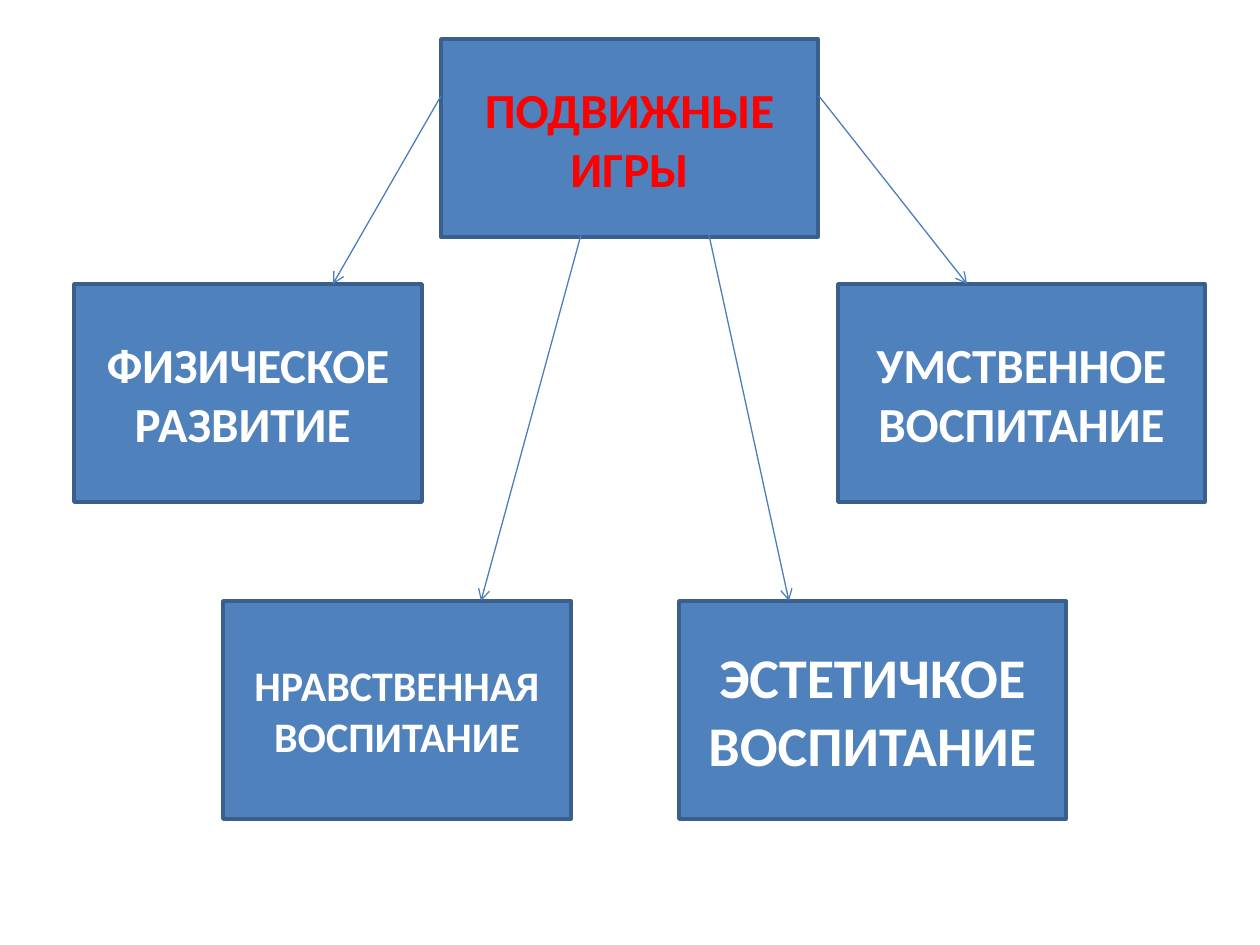
import pptx
import pptx.dml.color
import pptx.enum.shapes
import pptx.enum.text
import pptx.oxml.ns
import pptx.util
from lxml import etree

PX = 914400 // 126
SLIDE_SIZE = (1260, 945)
FILL, BORDER, ARROW = "4F81BD", "3A5F8C", "4B7EBC"
RED, WHITE = "FF0000", "FFFFFF"

# text, (left, top, width, height) in px, font size, text colour
BOXES = [
    ("ПОДВИЖНЫЕ ИГРЫ", (441, 39, 377, 198), 28, RED),
    ("ФИЗИЧЕСКОЕ РАЗВИТИЕ ", (74, 284, 348, 218), 28, WHITE),
    ("НРАВСТВЕННАЯ ВОСПИТАНИЕ", (223, 601, 348, 218), 24, WHITE),
    ("ЭСТЕТИЧКОЕ ВОСПИТАНИЕ", (679, 601, 387, 218), 32, WHITE),
    ("УМСТВЕННОЕ ВОСПИТАНИЕ", (838, 284, 367, 218), 28, WHITE),
]

# start x, start y, end x, end y in px
ARROWS = [
    (581, 235, 481, 601),
    (709, 235, 789, 601),
    (441, 96, 333, 284),
    (819, 96, 967, 284),
]


def emu(lengths):
    return [length * PX for length in lengths]


def color(value):
    return pptx.dml.color.RGBColor.from_string(value)


def style_line(line, value, width):
    line.color.rgb = color(value)
    line.width = pptx.util.Pt(width)


def add_box(slide, text, bounds, size, text_color):
    shape = slide.shapes.add_shape(
        pptx.enum.shapes.MSO_SHAPE.RECTANGLE, *emu(bounds))
    shape.shadow.inherit = False
    shape.fill.solid()
    shape.fill.fore_color.rgb = color(FILL)
    style_line(shape.line, BORDER, 2)
    frame = shape.text_frame
    frame.word_wrap = True
    frame.vertical_anchor = pptx.enum.text.MSO_ANCHOR.MIDDLE
    paragraph = frame.paragraphs[0]
    paragraph.alignment = pptx.enum.text.PP_ALIGN.CENTER
    run = paragraph.add_run()
    run.text = text
    run.font.name = "Calibri"
    run.font.size = pptx.util.Pt(size)
    run.font.bold = True
    run.font.color.rgb = color(text_color)


def add_arrow(slide, points):
    connector = slide.shapes.add_connector(
        pptx.enum.shapes.MSO_CONNECTOR.STRAIGHT, *emu(points))
    style_line(connector.line, ARROW, 0.75)
    properties = connector._element.spPr
    outline = properties.find(pptx.oxml.ns.qn("a:ln"))
    etree.SubElement(outline, pptx.oxml.ns.qn("a:tailEnd"), type="arrow")
    etree.SubElement(properties, pptx.oxml.ns.qn("a:effectLst"))


def main():
    presentation = pptx.Presentation()
    presentation.slide_width, presentation.slide_height = emu(SLIDE_SIZE)
    slide = presentation.slides.add_slide(presentation.slide_layouts[6])
    for box in BOXES:
        add_box(slide, *box)
    for points in ARROWS:
        add_arrow(slide, points)
    presentation.save("out.pptx")


if __name__ == "__main__":
    main()
